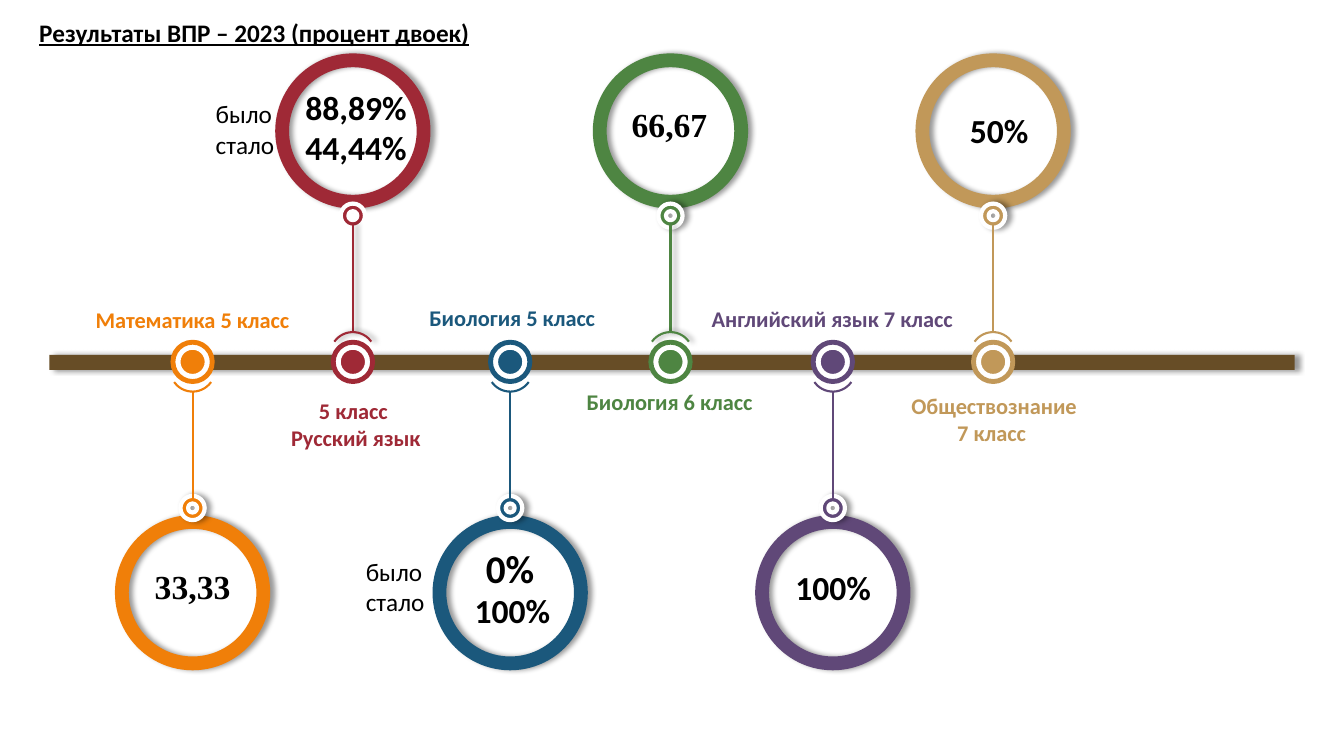
from lxml.etree import SubElement
from pptx import Presentation
from pptx.dml.color import RGBColor
from pptx.enum.shapes import MSO_CONNECTOR, MSO_SHAPE
from pptx.enum.text import MSO_AUTO_SIZE, PP_ALIGN
from pptx.oxml.ns import qn
from pptx.util import Inches, Pt

WHITE, BLACK, BROWN = "FFFFFF", "000000", "674D26"
RED, ORANGE, BLUE = "9F2936", "F07F09", "1B587C"
GREEN, PURPLE, SAND = "4E8542", "604878", "C19859"
SANS, SERIF = "Calibri", "Times New Roman"
LEFT, MID = PP_ALIGN.LEFT, PP_ALIGN.CENTER

BAR = (0.49, 3.52, 12.35, 0.15)
AXIS = 3.59

# centre x, side (-1 above the bar, 1 below), colour, node shadow, stem shadow
STOPS = [
    (1.91, 1, ORANGE, True, False),
    (3.5, -1, RED, False, True),
    (5.06, 1, BLUE, True, False),
    (6.65, -1, GREEN, True, True),
    (8.26, 1, PURPLE, True, False),
    (9.85, -1, SAND, True, False),
]

# left, top, width, height, lines, colour, alignment
LABELS = [
    (0.85, 2.99, 2.15, 0.37, ["Математика 5 класс"], ORANGE, LEFT),
    (2.78, 3.89, 1.5, 0.64, ["5 класс ", "Русский язык"], RED, MID),
    (4.16, 2.97, 1.86, 0.37, ["Биология 5 класс"], BLUE, LEFT),
    (6.96, 2.98, 2.62, 0.37, ["Английский язык 7 класс"], PURPLE, LEFT),
    (5.72, 3.8, 1.86, 0.37, ["Биология 6 класс"], GREEN, LEFT),
    (8.93, 3.84, 1.86, 0.64, ["Обществознание", "7 класс "], SAND, MID),
]

# left, top, width, height, lines, size, font, alignment
VALUES = [
    (1.43, 5.57, 0.96, 0.5, ["33,33"], 24, SERIF, MID),
    (2.93, 0.81, 1.22, 0.91, ["88,89%", "44,44%"], 24, SANS, LEFT),
    (6.16, 0.98, 0.96, 0.5, ["66,67"], 24, SERIF, MID),
    (9.52, 1.04, 0.79, 0.5, ["50%"], 24, SANS, LEFT),
    (4.72, 5.35, 0.69, 0.57, ["0%"], 28, SANS, LEFT),
    (4.61, 5.8, 0.96, 0.5, ["100%"], 24, SANS, LEFT),
    (7.79, 5.58, 0.96, 0.5, ["100%"], 24, SANS, LEFT),
]

TITLE = (0.29, 0.12, 4.51, 0.4, ["Результаты ВПР – 2023 (процент двоек)"])
NOTE = ["было", "стало"]
NOTES = [(2.04, 0.93), (3.53, 5.47)]

deck = Presentation()
deck.slide_width, deck.slide_height = Inches(13.33), Inches(7.5)
slide = deck.slides.add_slide(deck.slide_layouts[6])


def color(code):
    return RGBColor.from_string(code)


def effect(item, shadow):
    """Give the item a soft shadow to the right, or none at all."""
    props = item._element.spPr
    for old in props.findall(qn("a:effectLst")):
        props.remove(old)
    effects = SubElement(props, qn("a:effectLst"))
    if shadow:
        outer = SubElement(effects, qn("a:outerShdw"), blurRad=str(Pt(4)),
                           dist=str(Pt(3)), dir="0", algn="l", rotWithShape="0")
        tint = SubElement(outer, qn("a:srgbClr"), val=BLACK)
        SubElement(tint, qn("a:alpha"), val="40000")


def add_form(kind, box, fill=None, line=None, width=0, adjust=(), shadow=False):
    form = slide.shapes.add_shape(kind, *map(Inches, box))
    if fill:
        form.fill.solid()
        form.fill.fore_color.rgb = color(fill)
    else:
        form.fill.background()
    if line:
        form.line.color.rgb = color(line)
        form.line.width = Pt(width)
    else:
        form.line.fill.background()
    for i, value in enumerate(adjust):
        form.adjustments[i] = value
    effect(form, shadow)
    return form


def add_round(kind, x, y, size, **style):
    """Add a form of equal sides centred on x, y."""
    return add_form(kind, (x - size / 2, y - size / 2, size, size), **style)


def add_stem(x, start, end, tint, shadow):
    stem = slide.shapes.add_connector(
        MSO_CONNECTOR.STRAIGHT, *map(Inches, (x, start, x, end)))
    stem.line.color.rgb = color(tint)
    stem.line.width = Pt(1.5)
    effect(stem, shadow)


def add_stop(x, side, tint, node_shadow, stem_shadow):
    """Draw the dot on the bar with its stem, node and ring."""
    add_round(MSO_SHAPE.OVAL, x, AXIS, 0.31, fill=tint, line=WHITE, width=5)
    add_round(MSO_SHAPE.OVAL, x, AXIS, 0.39, line=tint, width=3.5)
    add_round(MSO_SHAPE.DONUT, x, AXIS + side * 2.29, 1.54, fill=tint,
              adjust=[0.089], shadow=True)
    add_round(MSO_SHAPE.DONUT, x, AXIS + side * 1.45, 0.24, fill=tint,
              line=WHITE, width=3, adjust=[0.315], shadow=node_shadow)
    add_stem(x, AXIS + side * 1.37, AXIS + side * 0.29, tint, stem_shadow)
    arc = add_round(MSO_SHAPE.ARC, x, AXIS + side * 0.07, 0.45, line=tint,
                    width=1.5, adjust=[157.218, 6.667], shadow=stem_shadow)
    arc.rotation = 133.4 if side > 0 else 313.4


def add_text(box, lines, size, tint=BLACK, face=SANS, align=LEFT,
             bold=True, underline=None):
    frame = slide.shapes.add_textbox(*map(Inches, box)).text_frame
    frame.word_wrap = False
    frame.auto_size = MSO_AUTO_SIZE.SHAPE_TO_FIT_TEXT
    frame.text = "\n".join(lines)
    for para in frame.paragraphs:
        para.alignment = align
        font = para.font
        font.name, font.size = face, Pt(size)
        font.bold, font.underline = bold, underline
        font.color.rgb = color(tint)


add_form(MSO_SHAPE.RECTANGLE, BAR, fill=BROWN, shadow=True)
for stop in STOPS:
    add_stop(*stop)
for *box, lines, tint, align in LABELS:
    add_text(box, lines, 16, tint, align=align)
for *box, lines, size, face, align in VALUES:
    add_text(box, lines, size, face=face, align=align)
*box, lines = TITLE
add_text(box, lines, 18, underline=True)
for left, top in NOTES:
    add_text((left, top, 0.79, 0.71), NOTE, 18, bold=False)

deck.save("out.pptx")
